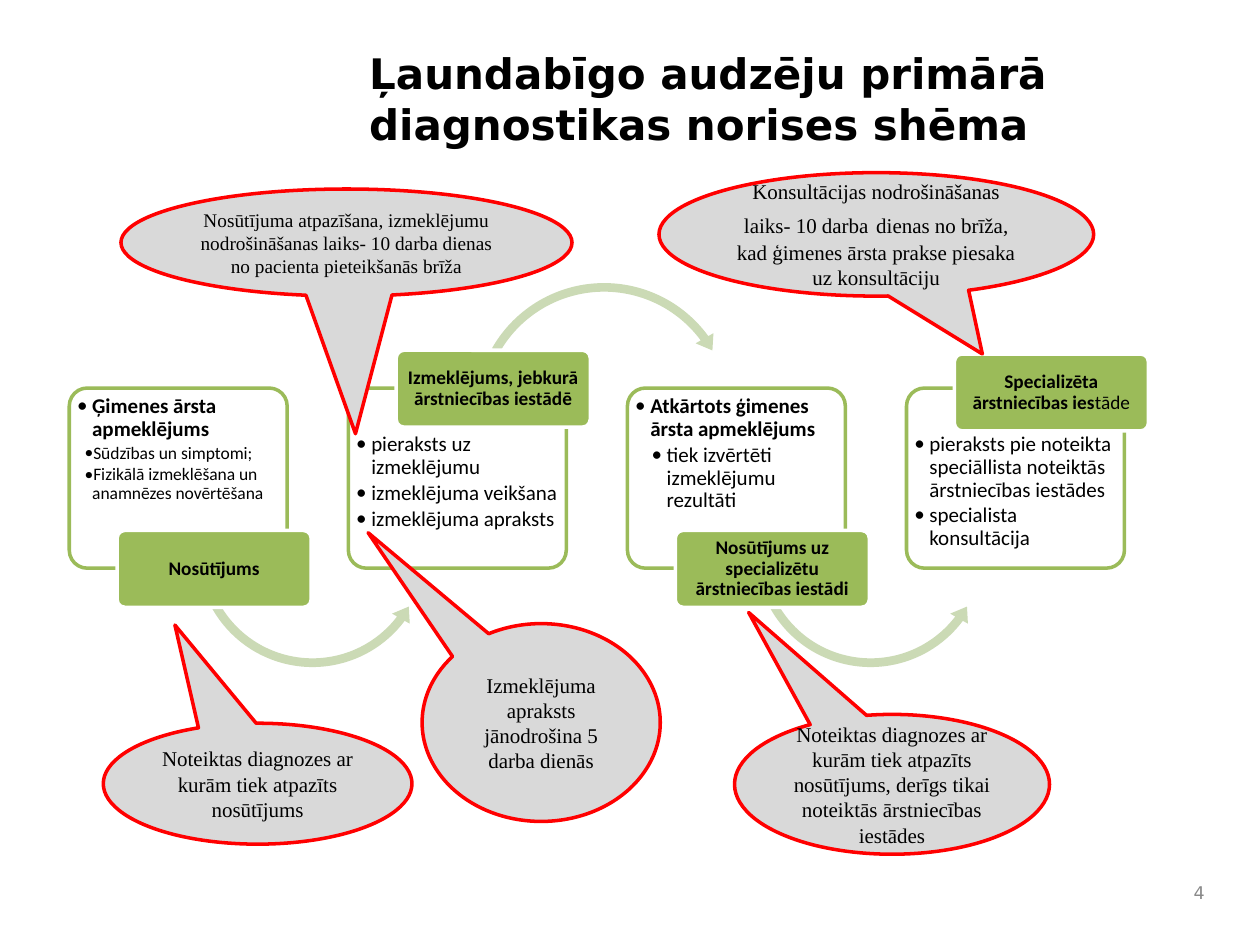
from dataclasses import dataclass

from lxml.etree import SubElement
from pptx import Presentation
from pptx.dml.color import RGBColor
from pptx.enum.shapes import MSO_SHAPE as Shape
from pptx.enum.text import MSO_ANCHOR as Anchor, PP_ALIGN as Align
from pptx.oxml.ns import qn
from pptx.util import Inches, Pt


@dataclass(frozen=True)
class Theme:
    green: str = "9BBB59"
    pale_green: str = "CBDAB5"
    grey: str = "D9D9D9"
    red: str = "FF0000"
    white: str = "FFFFFF"
    black: str = "000000"
    number_grey: str = "898989"
    head: str = "DejaVu Sans"
    body: str = "Calibri"
    note: str = "Times New Roman"
    title_size: int = 24
    body_size: int = 12
    label_size: int = 11
    small_size: int = 10
    line: int = 2


T = Theme()
WIDTH, HEIGHT = 10, 7.5

# Step grid
LEFT, TOP, PITCH = 0.55, 3.08, 2.215
CARD_W, CARD_H = 1.73, 1.43
LABEL_W, LABEL_H, LABEL_DX = 1.54, 0.61, 0.38
LABEL_LOW = 1.13

# Circular arrows: shape, offset from the card, size, adjustments
ARROW_BELOW = (Shape.LEFT_CIRCULAR_ARROW, 0.97, 0.34, 1.92,
               (0.036, 4.48, 22.235, 90.245, 0.042))
ARROW_ABOVE = (Shape.CIRCULAR_ARROW, 0.96, -0.88, 2.14,
               (0.032, 4, 194.245, 125.755, 0.038))


# Bullets: text, level, bold, size, left margin, bullet width
def bullet(text, bold=False):
    return text, 1, bold, T.body_size, 0.12, 0.12


def small_bullet(text):
    return text, 2, False, T.small_size, 0.12, 0.06


# Steps: bullets, top inset, label runs, label offset, arrow
STEPS = [
    ([bullet("Ģimenes ārsta apmeklējums", True),
      small_bullet("Sūdzības un simptomi;"),
      small_bullet("Fizikālā izmeklēšana un anamnēzes novērtēšana")],
     0.02, [("Nosūtījums", True)], LABEL_LOW, ARROW_BELOW),
    ([bullet("pieraksts uz izmeklējumu"),
      bullet("izmeklējuma veikšana"),
      bullet("izmeklējuma apraksts")],
     0.32, [("Izmeklējums, jebkurā ārstniecības iestādē", True)], -0.3, ARROW_ABOVE),
    ([bullet("Atkārtots ģimenes ārsta apmeklējums", True),
      ("tiek izvērtēti izmeklējumu rezultāti", 2, False, T.body_size, 0.25, 0.12)],
     0.02, [("Nosūtījums uz specializētu ārstniecības iestādi", True)],
     LABEL_LOW, ARROW_BELOW),
    ([bullet("pieraksts pie noteikta speciāllista noteiktās ārstniecības iestādes"),
      bullet("specialista konsultācija")],
     0.32, [("Specializēta ārstniecības ies", True), ("tāde", False)], -0.27, None),
]

# Callouts: box, tail tip, runs of (text, size)
CALLOUTS = [
    ((0.96, 1.5, 3.58, 0.85), (0.02, 1.785),
     [("Nosūtījuma atpazīšana, izmeklējumu nodrošināšanas laiks- 10 darba dienas "
       "no pacienta pieteikšanās brīža", 11)]),
    ((0.82, 5.74, 2.45, 0.96), (-0.268, -1.312),
     [("Noteiktas diagnozes ar kurām tiek atpazīts nosūtījums", 12)]),
    ((3.35, 4.95, 1.89, 1.57), (-0.727, -0.96),
     [("Izmeklējuma apraksts jānodrošina 5 darba dienās", 12)]),
    ((5.83, 5.67, 2.5, 1.11), (-0.455, -1.229),
     [("Noteiktas diagnozes ar kurām tiek atpazīts nosūtījums, derīgs tikai "
       "noteiktās ārstniecības iestādes", 12)]),
    ((5.23, 1.37, 3.45, 0.98), (0.244, 0.969),
     [("Konsultācijas nodrošināšanas laiks- 10 darba", 12), (" ", 17),
      ("dienas no brīža, kad ģimenes ārsta prakse piesaka uz konsultāciju", 12)]),
]


def rgb(color):
    return RGBColor.from_string(color)


def add_shape(slide, kind, box, fill, line=None, adjustments=()):
    sp = slide.shapes.add_shape(kind, *map(Inches, box))
    sp.shadow.inherit = False
    sp.fill.solid()
    sp.fill.fore_color.rgb = rgb(fill)
    if line:
        sp.line.color.rgb = rgb(line)
        sp.line.width = Pt(T.line)
    else:
        sp.line.fill.background()
    for i, value in enumerate(adjustments):
        sp.adjustments[i] = value
    return sp


def set_frame(tf, anchor, insets):
    tf.word_wrap = True
    tf.vertical_anchor = anchor
    (tf.margin_left, tf.margin_top,
     tf.margin_right, tf.margin_bottom) = map(Inches, insets)


def add_run(p, text, font, size, color=T.black, bold=False):
    r = p.add_run()
    r.text = text
    r.font.name, r.font.size, r.font.bold = font, Pt(size), bold
    r.font.color.rgb = rgb(color)


def add_title(slide, box):
    title = slide.shapes.title
    title.left, title.top, title.width, title.height = map(Inches, box)
    set_frame(title.text_frame, Anchor.TOP, (0.1, 0.05, 0.1, 0.05))
    p = title.text_frame.paragraphs[0]
    p.alignment = Align.LEFT
    add_run(p, "Ļaundabīgo audzēju primārā diagnostikas norises shēma",
            T.head, T.title_size, bold=True)


def add_bullets(tf, bullets):
    for i, (text, level, bold, size, margin, hang) in enumerate(bullets):
        p = tf.add_paragraph() if i else tf.paragraphs[0]
        pPr = p._p.get_or_add_pPr()
        pPr.set("marL", str(Inches(margin)))
        pPr.set("indent", str(-Inches(hang)))
        SubElement(pPr, qn("a:buFont")).set("typeface", T.body)
        SubElement(pPr, qn("a:buChar")).set("char", "•")
        p.level, p.alignment = level, Align.LEFT
        p.line_spacing, p.space_after = 0.9, Pt(0.15 * size)
        add_run(p, text, T.body, size, bold=bold)


def add_step(slide, x, y, bullets, top_inset, label_runs, label_dy, arrow):
    # Card with bullets; the narrow side insets keep short bullets on one line
    card = add_shape(slide, Shape.ROUNDED_RECTANGLE, (x, y, CARD_W, CARD_H),
                     T.white, T.green, [0.1])
    set_frame(card.text_frame, Anchor.TOP, (0.02, top_inset, 0, 0))
    add_bullets(card.text_frame, bullets)
    # Arrow to the next step
    if arrow:
        kind, dx, dy, size, adjustments = arrow
        add_shape(slide, kind, (x + dx, y + dy, size, size), T.pale_green,
                  adjustments=adjustments)
    # Label over the card's edge
    label = add_shape(slide, Shape.ROUNDED_RECTANGLE,
                      (x + LABEL_DX, y + label_dy, LABEL_W, LABEL_H),
                      T.green, T.white, [0.1])
    set_frame(label.text_frame, Anchor.MIDDLE, (0.02,) * 4)
    p = label.text_frame.paragraphs[0]
    p.alignment, p.line_spacing = Align.CENTER, 0.9
    for text, bold in label_runs:
        add_run(p, text, T.body, T.label_size, bold=bold)


def add_callout(slide, box, tip, runs):
    sp = add_shape(slide, Shape.OVAL_CALLOUT, box, T.grey, T.red, tip)
    set_frame(sp.text_frame, Anchor.MIDDLE, (0.1, 0.05, 0.1, 0.05))
    p = sp.text_frame.paragraphs[0]
    p.alignment = Align.CENTER
    for text, size in runs:
        add_run(p, text, T.note, size)


def add_slide_number(slide, box):
    tf = slide.shapes.add_textbox(*map(Inches, box)).text_frame
    set_frame(tf, Anchor.MIDDLE, (0.1, 0.05, 0.1, 0.05))
    p = tf.paragraphs[0]
    p.alignment = Align.RIGHT
    add_run(p, "4", T.head, T.small_size, T.number_grey)


def main():
    prs = Presentation()
    prs.slide_width, prs.slide_height = Inches(WIDTH), Inches(HEIGHT)
    slide = prs.slides.add_slide(prs.slide_layouts[5])
    add_title(slide, (2.83, 0.33, 6.67, 1.17))
    add_slide_number(slide, (9.33, 6.92, 0.33, 0.33))
    for i, step in enumerate(STEPS):
        add_step(slide, LEFT + i * PITCH, TOP, *step)
    for callout in CALLOUTS:
        add_callout(slide, *callout)
    prs.save("out.pptx")


if __name__ == "__main__":
    main()
